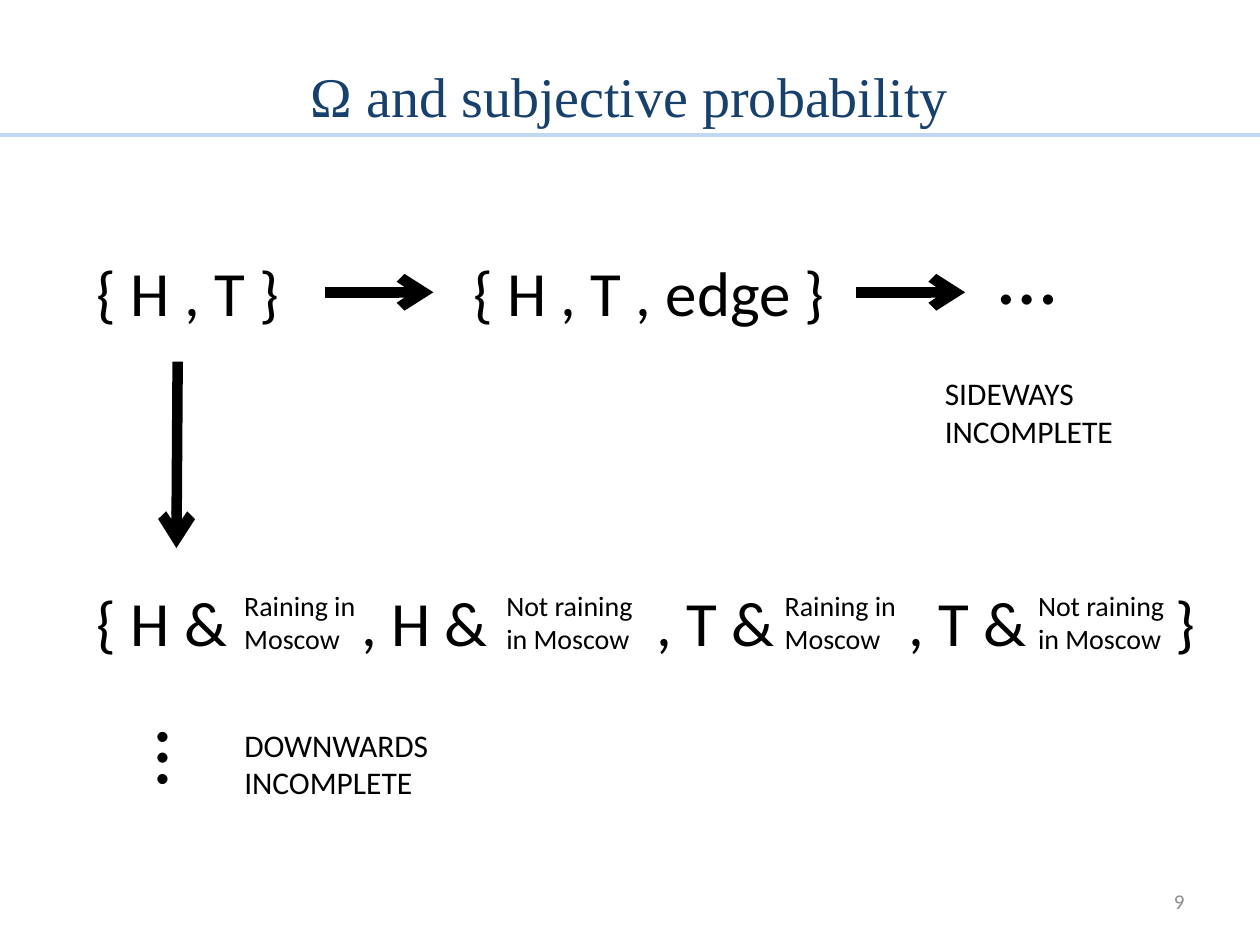
"""Build a slide on sideways and downwards incomplete sample spaces."""
from lxml.etree import SubElement
from pptx import Presentation
from pptx.dml.color import RGBColor
from pptx.enum.shapes import MSO_CONNECTOR as Conn
from pptx.enum.text import MSO_ANCHOR as Anchor, MSO_AUTO_SIZE as Fit, PP_ALIGN as Align
from pptx.oxml.ns import qn
from pptx.util import Inches, Pt


def write(text, box, size=36, font="Calibri", color="000000", align=Align.LEFT,
          anchor=Anchor.TOP, turn=0, shape=None):
    left, top, width, height = map(Inches, box)
    shape = shape or slide.shapes.add_textbox(left, top, width, height)
    shape.left, shape.top, shape.width, shape.height = left, top, width, height
    shape.rotation = turn
    frame = shape.text_frame
    frame.word_wrap = True
    frame.auto_size = Fit.NONE
    frame.vertical_anchor = anchor
    para = frame.paragraphs[0]
    para.alignment = align
    run = para.add_run()
    run.text = text
    run.font.size = Pt(size)
    run.font.name = font
    run.font.color.rgb = RGBColor.from_string(color)
    return para


def draw(start, end, color="000000", width=6, arrow=True):
    line = slide.shapes.add_connector(Conn.STRAIGHT, *map(Inches, start + end))
    line.line.color.rgb = RGBColor.from_string(color)
    line.line.width = Pt(width)
    if arrow:
        SubElement(line.line._get_or_add_ln(), qn("a:tailEnd"), type="arrow")
    SubElement(line._element.spPr, qn("a:effectLst"))


deck = Presentation()
deck.slide_width, deck.slide_height = Inches(10), Inches(7.5)
slide = deck.slides.add_slide(deck.slide_layouts[5])

draw((0, 1.07), (10, 1.07), color="C1D8F2", width=2, arrow=False)
write("Ω and subjective probability", (0.5, 0.3, 9, 0.77), size=32,
      font="Times New Roman", color="17406D", align=Align.CENTER,
      anchor=Anchor.BOTTOM, shape=slide.shapes.title)
write("9", (7.17, 6.95, 2.33, 0.4), size=12, color="8C8C8C",
      align=Align.RIGHT, anchor=Anchor.MIDDLE)

write("{ H , T }", (0.67, 1.96, 1.69, 0.71))
write("{ H , T , edge }", (3.66, 1.96, 3.43, 0.71))
for start, end in [((2.58, 2.32), (3.44, 2.32)),
                   ((6.79, 2.32), (7.66, 2.32)),
                   ((1.41, 2.87), (1.4, 4.35))]:
    draw(start, end)

for left, top, turn in [(7.83, 1.7, 0), (1.05, 5.7, 90)]:
    write("…", (left, top, 0.93, 0.91), size=48, turn=turn)

pairs = write("{ H &\t, H &\t, T &\t, T &\t}", (0.67, 4.58, 9.08, 0.71))
tabs = SubElement(pairs._p.get_or_add_pPr(), qn("a:tabLst"))
for stop in (2.1, 4.44, 6.44, 8.56):
    SubElement(tabs, qn("a:tab"), pos=str(Inches(stop)), algn="l")

for text, width, lefts in [("Raining in Moscow", 1.17, (1.84, 6.13)),
                           ("Not raining in Moscow", 1.26, (3.92, 8.14))]:
    for left in lefts:
        write(text, (left, 4.62, width, 0.64), size=16)

write("SIDEWAYS INCOMPLETE", (7.4, 2.92, 1.65, 0.71), size=18)
write("DOWNWARDS INCOMPLETE", (1.84, 5.71, 1.82, 0.71), size=18)

deck.save("out.pptx")
